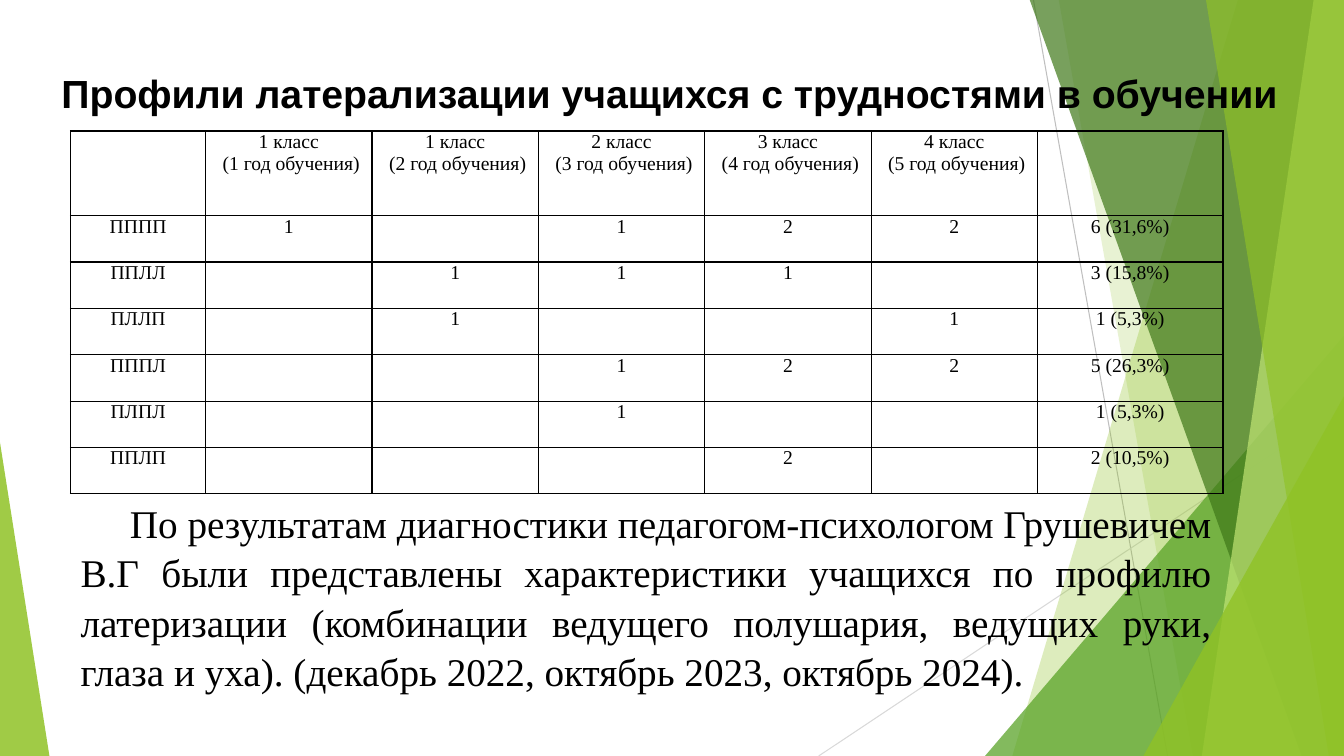
from lxml import etree
from pptx import Presentation
from pptx.dml.color import RGBColor
from pptx.enum.shapes import MSO_CONNECTOR, MSO_SHAPE
from pptx.enum.text import MSO_ANCHOR, PP_ALIGN
from pptx.oxml.ns import qn
from pptx.util import Pt

PX = 9144
STRAIGHT = MSO_CONNECTOR.STRAIGHT
TRIANGLE = MSO_SHAPE.ISOSCELES_TRIANGLE
TOP = MSO_ANCHOR.TOP
LEFT, CENTER, JUSTIFY = PP_ALIGN.LEFT, PP_ALIGN.CENTER, PP_ALIGN.JUSTIFY

BLACK = RGBColor(0x00, 0x00, 0x00)
GREY = RGBColor(0xBF, 0xBF, 0xBF)
PALE_GREY = RGBColor(0xD9, 0xD9, 0xD9)
GREEN = RGBColor(0x90, 0xC2, 0x26)
MID_GREEN = RGBColor(0x54, 0xA0, 0x21)
DARK_GREEN = RGBColor(0x3F, 0x78, 0x19)
LIGHT_GREEN = RGBColor(0xC0, 0xE4, 0x74)


def write(tf, text, size=14, font="Times New Roman", bold=False, align=CENTER, spacing=1.0):
    for i, line in enumerate(text.split("\n")):
        p = tf.add_paragraph() if i else tf.paragraphs[0]
        p.alignment = align
        p.line_spacing = spacing
        r = p.add_run()
        r.text = line
        r.font.size = Pt(size)
        r.font.name = font
        r.font.bold = bold
        r.font.color.rgb = BLACK


def paint(sp, color, opacity):
    sp.shadow.inherit = False
    sp.fill.solid()
    sp.fill.fore_color.rgb = color
    sp.line.fill.background()
    clr = sp.element.find(".//" + qn("a:srgbClr"))
    etree.SubElement(clr, qn("a:alpha"), val=str(opacity * 1000))


prs = Presentation()
prs.slide_width, prs.slide_height = 1333 * PX, 750 * PX
s = prs.slides.add_slide(prs.slide_layouts[5])

for x1, y1, x2, y2, color in [
    (1025, 0, 1158, 750, GREY),
    (1333, 403, 812, 750, PALE_GREY),
]:
    ln = s.shapes.add_connector(STRAIGHT, x1 * PX, y1 * PX, x2 * PX, y2 * PX)
    ln.line.color.rgb = color
    ln.line.width = Pt(0.75)
    etree.SubElement(ln.element.spPr, qn("a:effectLst"))

BANDS = [
    ("band", 1228, 1004, GREEN, 30),
    ("band", 1050, 1183, GREEN, 20),
    ("triangle", (977, 333, 356, 417), 1, MID_GREEN, 72),
    ("band", 1021, 1291, DARK_GREEN, 70),
    ("band", 1303, 1192, LIGHT_GREEN, 70),
    ("band", 1196, 1318, GREEN, 65),
    ("triangle", (1134, 393, 199, 357), 1, GREEN, 80),
    ("triangle", (0, 439, 49, 311), 0, GREEN, 85),
]
for kind, a, b, color, opacity in BANDS:
    if kind == "band":
        fb = s.shapes.build_freeform(a, -1, scale=PX)
        fb.add_line_segments([(1333, -1), (1333, 750), (b, 750)], close=True)
        sp = fb.convert_to_shape()
    else:
        sp = s.shapes.add_shape(TRIANGLE, *[v * PX for v in a])
        sp.adjustments[0] = b
    paint(sp, color, opacity)

ROWS = [
    ["", "1 класс\n (1 год обучения)", "1 класс\n (2 год обучения)", "2 класс\n (3 год обучения)",
     "3 класс\n (4 год обучения)", "4 класс\n (5 год обучения)", ""],
    ["ПППП", "1", "", "1", "2", "2", "6 (31,6%)"],
    ["ППЛЛ", "", "1", "1", "1", "", "3 (15,8%)"],
    ["ПЛЛП", "", "1", "", "", "1", "1 (5,3%)"],
    ["ПППЛ", "", "", "1", "2", "2", "5 (26,3%)"],
    ["ПЛПЛ", "", "", "1", "", "", "1 (5,3%)"],
    ["ППЛП", "", "", "", "2", "", "2 (10,5%)"],
]
WIDTHS = [134] + [165] * 5 + [184]
HEIGHTS = [84] + [46] * 6
frame = s.shapes.add_table(len(ROWS), len(WIDTHS), 70 * PX, 130 * PX, sum(WIDTHS) * PX, sum(HEIGHTS) * PX)
table = frame.table
table.first_row = table.horz_banding = False
for col, width in zip(table.columns, WIDTHS):
    col.width = width * PX
for row, height, texts in zip(table.rows, HEIGHTS, ROWS):
    row.height = height * PX
    for cell, text in zip(row.cells, texts):
        cell.margin_left = cell.margin_right = 7 * PX
        cell.margin_top = cell.margin_bottom = 0
        cell.fill.background()
        if text:
            write(cell.text_frame, text)
for tcPr in list(frame.element.iter(qn("a:tcPr"))):
    for i, side in enumerate(["a:lnL", "a:lnR", "a:lnT", "a:lnB"]):
        border = etree.Element(qn(side), w=str(Pt(1)))
        fill = etree.SubElement(border, qn("a:solidFill"))
        etree.SubElement(fill, qn("a:srgbClr"), val=str(BLACK))
        tcPr.insert(i, border)

title = s.shapes.title
title.left, title.top, title.width, title.height = 51 * PX, 62 * PX, 1241 * PX, 88 * PX
tf = title.text_frame
tf.word_wrap = False
tf.vertical_anchor = TOP
tf.margin_top = 7 * PX
write(tf, "Профили латерализации учащихся с трудностями в обучении",
      size=28, font="Arial", bold=True, align=LEFT)
s.shapes.element.append(title.element)

summary = s.shapes.add_textbox(70 * PX, 488 * PX, 1141 * PX, 199 * PX)
tf = summary.text_frame
tf.word_wrap = True
write(tf, "По результатам диагностики педагогом-психологом Грушевичем В.Г были представлены "
      "характеристики учащихся по профилю латеризации (комбинации ведущего полушария, ведущих "
      "руки, глаза и уха). (декабрь 2022, октябрь 2023, октябрь 2024).",
      size=28, align=JUSTIFY, spacing=1.05)
summary.element.find(".//" + qn("a:pPr")).set("indent", str(49 * PX))

prs.save("out.pptx")
